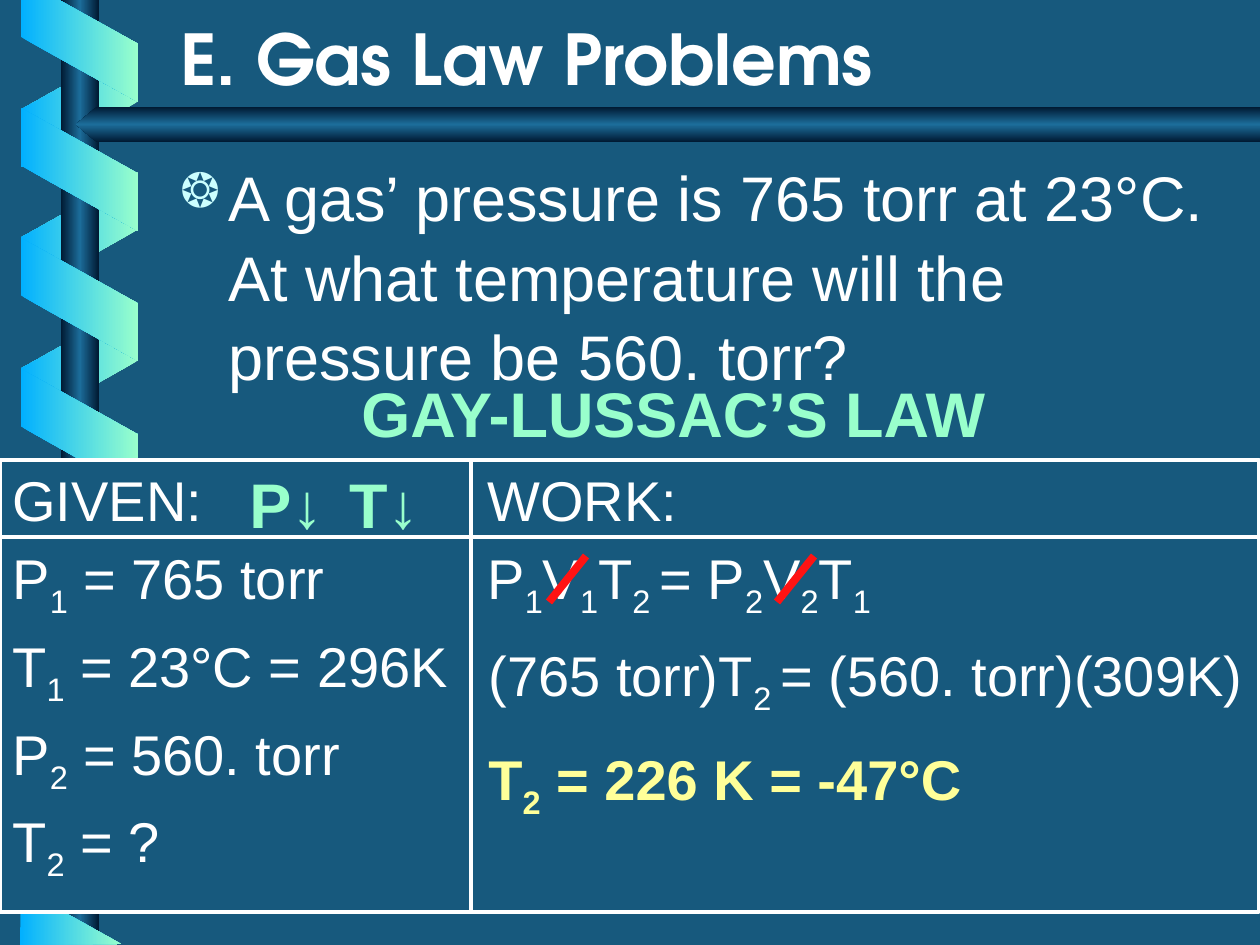
from lxml.etree import SubElement
from pptx import Presentation
from pptx.dml.color import RGBColor
from pptx.enum.shapes import MSO_CONNECTOR, MSO_SHAPE as SHAPE
from pptx.enum.text import MSO_ANCHOR, MSO_AUTO_SIZE, PP_ALIGN as ALIGN
from pptx.oxml.ns import qn
from pptx.util import Pt

PX = 914400 / 126  # EMU in one px
COLORS = {"back": "17597D", "white": "FFFFFF", "mint": "99FFCC", "sky": "01B0FF",
          "navy": "001932", "steel": "1C6D9A", "yellow": "FFFF99", "red": "FF1313",
          "bullet": "CCFFFF", "shadow": "001932"}


def paint_gradient(shape, names, angle):
    """Fill with evenly spaced colours; angle runs clockwise in degrees."""
    shape.shadow.inherit = False
    shape.line.fill.background()
    shape.fill.gradient()
    shape.fill.gradient_angle = -angle % 360
    stops = shape._element.spPr.find(qn("a:gradFill")).find(qn("a:gsLst"))
    for stop in list(stops):
        stops.remove(stop)
    for i, name in enumerate(names):
        stop = SubElement(stops, qn("a:gs"), pos=str(100000 * i // (len(names) - 1)))
        SubElement(stop, qn("a:srgbClr"), val=COLORS[name])


def write(frame, lines, size, color="white", bold=False, before=20, align=ALIGN.LEFT):
    """One paragraph per line; text between underscores is subscript."""
    frame.word_wrap = True
    for i, line in enumerate(lines):
        para = frame.paragraphs[0] if i == 0 else frame.add_paragraph()
        para.alignment = align
        gap = SubElement(para._p.get_or_add_pPr(), qn("a:spcBef"))
        SubElement(gap, qn("a:spcPct"), val=str(before * 1000))
        for j, piece in enumerate(line.split("_")):
            if not piece:
                continue
            run = para.add_run()
            run.text = piece
            run.font.size = Pt(size)
            run.font.name = "Arial"
            run.font.bold = bold
            run.font.color.rgb = RGBColor.from_string(COLORS[color])
            if j % 2:
                run._r.get_or_add_rPr().set("baseline", "-25000")


prs = Presentation()
prs.slide_width, prs.slide_height = round(1260 * PX), round(945 * PX)
slide = prs.slides.add_slide(prs.slide_layouts[5])
shapes = slide.shapes
slide.background.fill.solid()
slide.background.fill.fore_color.rgb = RGBColor.from_string(COLORS["back"])

# Back folds of the ribbon, the pole, then the front folds
pole_colors = ["navy", "steel", "navy"]
back_tops, front_tops = [436, 825, 47, 175, 306], [111, 241, 372]
for top in back_tops + front_tops:
    if top == front_tops[0]:
        pole = shapes.add_shape(SHAPE.RECTANGLE, *[round(v * PX) for v in (61, 0, 38, 945)])
        paint_gradient(pole, pole_colors, 0)
    fold = shapes.add_shape(SHAPE.PARALLELOGRAM,
                            *[round(v * PX) for v in (18, top, 123, 117)])
    fold.adjustments[0] = 0.56
    if top in back_tops:
        fold.rotation = 90
        fold._element.spPr.xfrm.set("flipH", "1")
        paint_gradient(fold, ["mint", "sky"], 90)
    else:
        fold.rotation = 270
        paint_gradient(fold, ["sky", "mint"], 90)

# Ribbon ends cut by the slide edges
for start, *rest in ([(21, 0), (21, 37), (138, 102), (138, 44), (59, 0)],
                     [(121, 944), (21, 888), (20, 945)]):
    builder = shapes.build_freeform(*start, scale=PX)
    builder.add_line_segments(rest, close=True)
    paint_gradient(builder.convert_to_shape(), ["sky", "mint"], 0)

# Bar under the title
bar = shapes.add_shape(SHAPE.PENTAGON, *[round(v * PX) for v in (76, 107, 1184, 35)])
bar.adjustments[0] = 0.59
bar._element.spPr.xfrm.set("flipH", "1")
paint_gradient(bar, pole_colors, 90)

# Title
title = shapes.title
title.left, title.top, title.width, title.height = [
    round(v * PX) for v in (168, 0, 1071, 106)]
heading = title.text_frame
heading.auto_size = MSO_AUTO_SIZE.NONE
heading.vertical_anchor = MSO_ANCHOR.BOTTOM
write(heading, ["E. Gas Law Problems"], 40, bold=True, before=0)
heading_run = heading.paragraphs[0].runs[0]
heading_run.font.name = "TeX Gyre Adventor"
effects = SubElement(heading_run._r.rPr, qn("a:effectLst"))
heading_run._r.rPr.find(qn("a:solidFill")).addnext(effects)
shadow = SubElement(effects, qn("a:outerShdw"), dist="35921", dir="2700000")
SubElement(shadow, qn("a:srgbClr"), val=COLORS["shadow"])

# Question with its bullet
question = shapes.add_textbox(*[round(v * PX) for v in (168, 149, 1071, 302)]).text_frame
write(question, ["A gas’ pressure is 765 torr at 23°C. At what temperature will the "
                 "pressure be 560. torr?"], 36, before=100)
question.paragraphs[0].line_spacing = 1.05
bullet = question.paragraphs[0]._p.pPr
bullet.set("marL", str(round(48 * PX)))
bullet.set("indent", str(round(-48 * PX)))
bullet_color = SubElement(bullet, qn("a:buClr"))
SubElement(bullet_color, qn("a:srgbClr"), val=COLORS["bullet"])
SubElement(bullet, qn("a:buSzPct"), val="75000")
SubElement(bullet, qn("a:buChar"), char="❂")

# Frame of the worked solution
panel = shapes.add_shape(SHAPE.RECTANGLE, *[round(v * PX) for v in (0, 460, 1259, 452)])
panel.shadow.inherit = False
panel.fill.solid()
panel.fill.fore_color.rgb = RGBColor.from_string(COLORS["back"])
panel.line.color.rgb = RGBColor.from_string(COLORS["white"])
panel.line.width = Pt(2.25)

# Given values, working and answer: box, lines, size, colour, bold, space before, alignment
for box, *text in (
    ((0, 459, 520, 486), ["GIVEN:", "P_1_ = 765 torr", "T_1_ = 23°C = 296K",
                          "P_2_ = 560. torr", "T_2_ = ?"], 32),
    ((475, 459, 785, 180), ["WORK:", "P_1_V_1_T_2 _= P_2_V_2_T_1_"], 32),
    ((320, 368, 707, 81), ["GAY-LUSSAC’S LAW"], 36, "mint", True, 20, ALIGN.CENTER),
    ((237, 459, 113, 81), ["P↓"], 36, "mint", True),
    ((325, 459, 118, 81), ["T↓"], 36, "mint", True, 20, ALIGN.CENTER),
):
    write(shapes.add_textbox(*[round(v * PX) for v in box]).text_frame, *text)

# Dividers and the strokes that cancel V
for ends, color, weight in (
    ((471, 460, 471, 912), "white", 2.25),
    ((0, 537, 1260, 537), "white", 2.25),
    ((549, 602, 586, 556), "red", 4.5),
    ((777, 602, 814, 556), "red", 4.5),
):
    stroke = shapes.add_connector(MSO_CONNECTOR.STRAIGHT, *[round(v * PX) for v in ends])
    stroke.line.color.rgb = RGBColor.from_string(COLORS[color])
    stroke.line.width = Pt(weight)
    SubElement(stroke._element.spPr, qn("a:effectLst"))

# Substitution and answer
solution = shapes.add_textbox(*[round(v * PX) for v in (476, 634, 785, 198)]).text_frame
write(solution, ["(765 torr)T_2 _= (560. torr)(309K)"], 32, before=40)
solution.add_paragraph()
answer = solution.paragraphs[1]
gap = SubElement(answer._p.get_or_add_pPr(), qn("a:spcBef"))
SubElement(gap, qn("a:spcPct"), val="50000")
for piece, baseline in (("T", "0"), ("2", "-25000"), (" = 226 K = -47°C", "0")):
    run = answer.add_run()
    run.text = piece
    run.font.size = Pt(32)
    run.font.name = "Arial"
    run.font.bold = True
    run.font.color.rgb = RGBColor.from_string(COLORS["yellow"])
    run._r.get_or_add_rPr().set("baseline", baseline)

prs.save("out.pptx")
